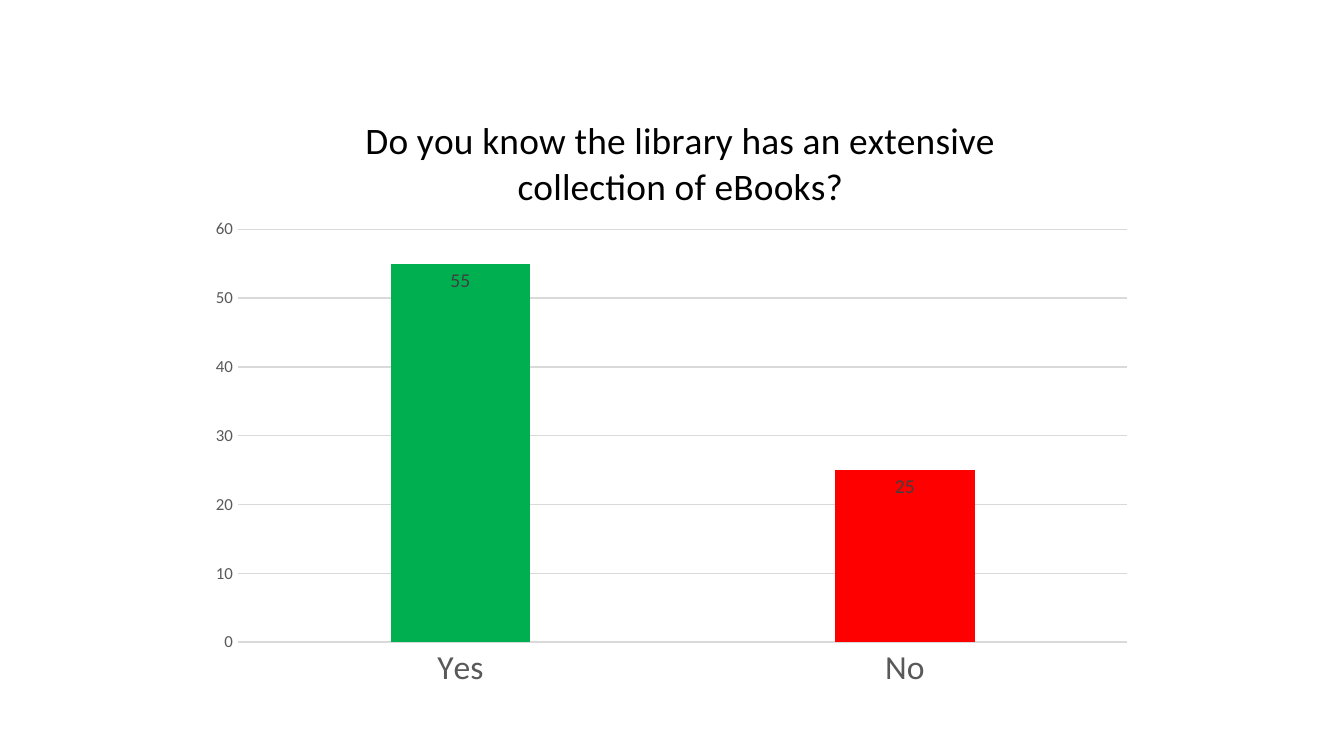
from typing import NamedTuple

from lxml import etree
from pptx import Presentation
from pptx import util as u
from pptx.chart.data import CategoryChartData
from pptx.dml.color import RGBColor
from pptx.enum import chart as ch
from pptx.oxml.ns import qn

FONT = "Calibri"
WIDTH = u.Inches(10)
HEIGHT = WIDTH * 9 // 16
GRID_GREY, AXIS_GREY = "D9D9D9", "595959"


class Answer(NamedTuple):
    label: str
    votes: int
    color: str


ANSWERS = [Answer("Yes", 55, "00B050"), Answer("No", 25, "FF0000")]


def rgb(color: str) -> RGBColor:
    return RGBColor.from_string(color)


def share(length: int, percent: float) -> int:
    return round(length * percent / 100)


def set_font(font, size: float, color: str) -> None:
    font.name, font.size, font.bold = FONT, u.Pt(size), False
    font.color.rgb = rgb(color)


def set_line(line, color: str, width: float = 0.75) -> None:
    line.color.rgb = rgb(color)
    line.width = u.Pt(width)


def write_title(chart, content: str, **fmt) -> None:
    chart.has_title = True
    p = chart.chart_title.text_frame.paragraphs[0]
    r = p.add_run()
    r.text = content
    set_font(r.font, **fmt)
    chart.chart_title.include_in_layout = False


def place(parent, index: int, target: str = "", **percents: float) -> None:
    """Give a chart part a manual layout, in percent of the chart's size."""
    for old in parent.findall(qn("c:layout")):
        parent.remove(old)
    layout = etree.Element(qn("c:layout"))
    manual = etree.SubElement(layout, qn("c:manualLayout"))
    values = {"layoutTarget": target} if target else {}
    values |= {"xMode": "edge", "yMode": "edge"}
    values |= {tag: f"{percent / 100:.4f}" for tag, percent in percents.items()}
    for tag, value in values.items():
        etree.SubElement(manual, qn(f"c:{tag}")).set("val", value)
    parent.insert(index, layout)


def style_axes(chart) -> None:
    cat, val = chart.category_axis, chart.value_axis
    for axis, size in ((cat, 18), (val, 9)):
        axis.major_tick_mark = axis.minor_tick_mark = ch.XL_TICK_MARK.NONE
        set_font(axis.tick_labels.font, size, AXIS_GREY)
    set_line(cat.format.line, GRID_GREY)
    val.format.line.fill.background()
    val.minimum_scale, val.maximum_scale, val.major_unit = 0, 60, 10
    val.has_major_gridlines = True
    set_line(val.major_gridlines.format.line, GRID_GREY)


def style_columns(plot, answers: list[Answer]) -> None:
    plot.gap_width, plot.overlap, plot.vary_by_categories = 219, -27, False
    series = plot.series[0]
    series.format.fill.solid()
    series.format.fill.fore_color.rgb = rgb("646464")
    for i, answer in enumerate(answers):
        fill = series.points[i].format.fill
        fill.solid()
        fill.fore_color.rgb = rgb(answer.color)
    labels = series.data_labels
    labels.show_value = True
    labels.position = ch.XL_LABEL_POSITION.INSIDE_END
    set_font(labels.font, 10.5, "404040")


def add_survey_chart(slide, answers: list[Answer]) -> None:
    data = CategoryChartData()
    data.categories = [a.label for a in answers]
    data.add_series("Series 1", [a.votes for a in answers])
    chart = slide.shapes.add_chart(
        ch.XL_CHART_TYPE.COLUMN_CLUSTERED,
        share(WIDTH, 15), share(HEIGHT, 11.95),
        share(WIDTH, 73.5), share(HEIGHT, 81.05), data).chart
    set_font(chart.font, 10, "000000")
    chart.has_legend = False
    write_title(chart, "Do you know the library has an extensive collection of eBooks?",
                size=20, color="000000")
    place(chart.chart_title._element, 1, x=15.9, y=2.7)
    plot_area = chart._chartSpace.find(f".//{qn('c:plotArea')}")
    place(plot_area, 0, "inner", x=3.7, y=22.7, w=90, h=67.4)
    style_axes(chart)
    style_columns(chart.plots[0], answers)


def main() -> None:
    prs = Presentation()
    prs.slide_width, prs.slide_height = WIDTH, HEIGHT
    slide = prs.slides.add_slide(prs.slide_layouts[6])
    add_survey_chart(slide, ANSWERS)
    prs.save("out.pptx")


if __name__ == "__main__":
    main()
